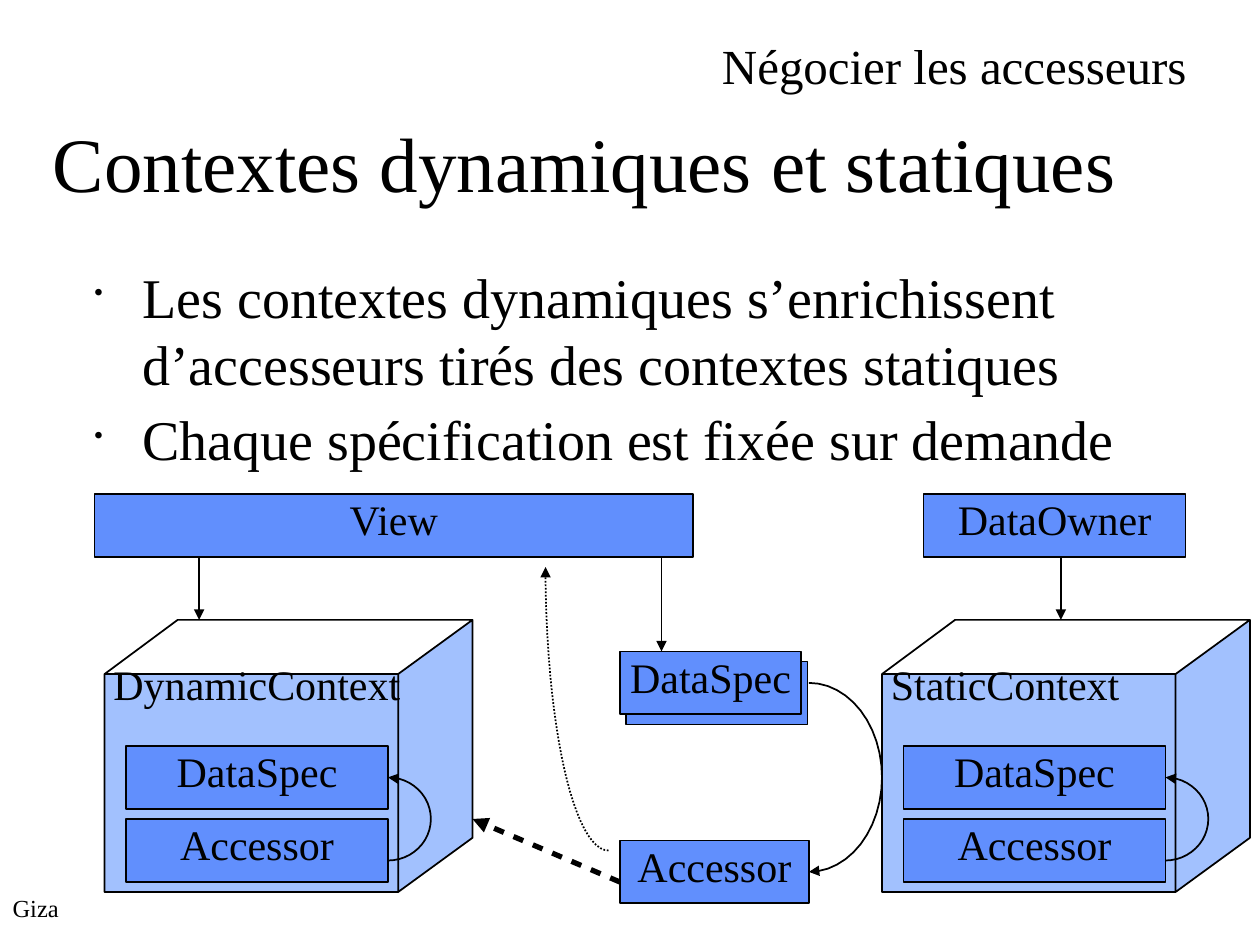
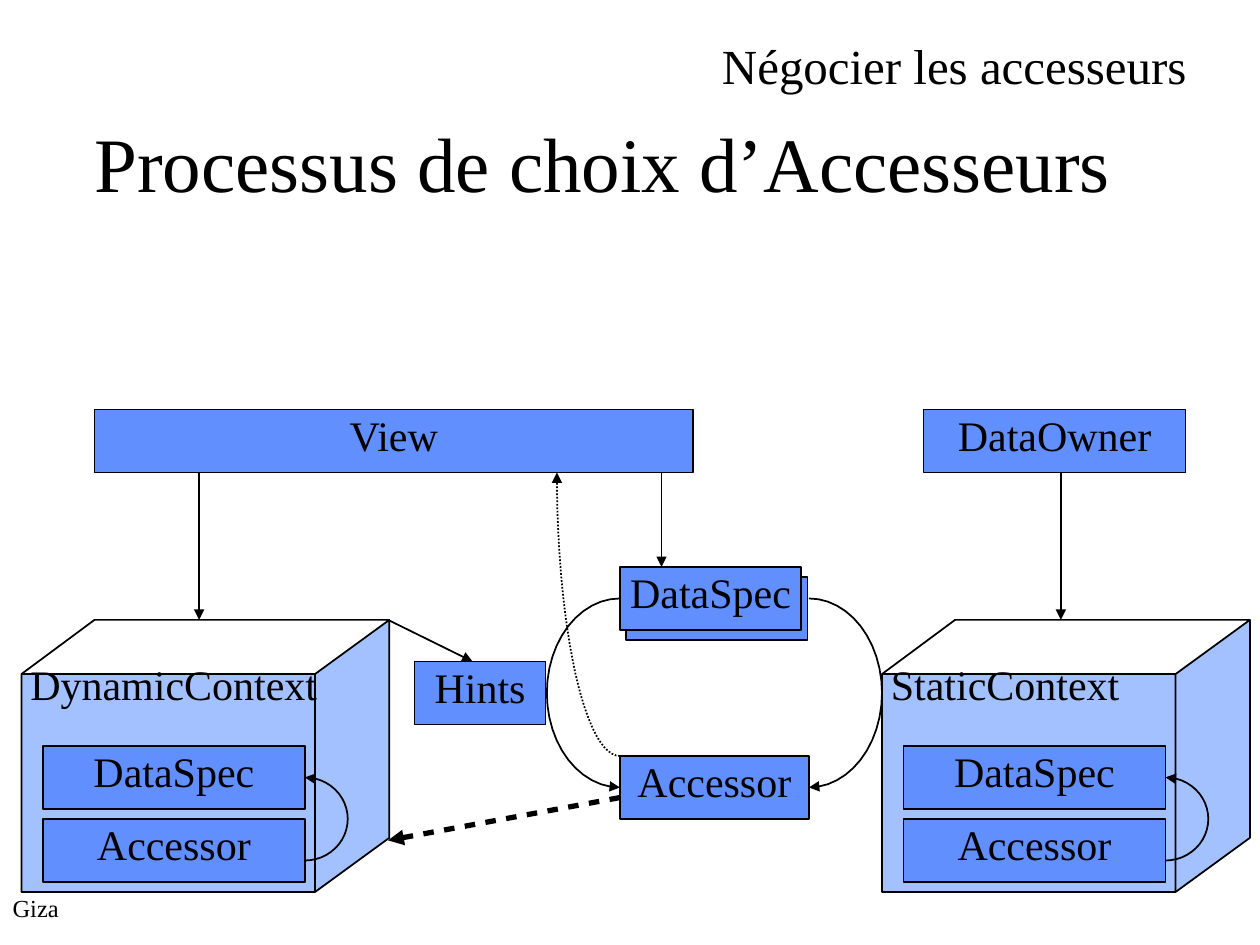
from math import cos, radians, sin

from lxml import etree
from pptx import Presentation
from pptx.dml.color import RGBColor
from pptx.enum.dml import MSO_LINE
from pptx.enum.shapes import MSO_CONNECTOR, MSO_SHAPE
from pptx.enum.text import MSO_ANCHOR, PP_ALIGN
from pptx.oxml.ns import qn
from pptx.util import Inches, Pt

STRAIGHT = MSO_CONNECTOR.STRAIGHT
RECTANGLE = MSO_SHAPE.RECTANGLE
TOP = MSO_ANCHOR.TOP
LEFT, CENTER = PP_ALIGN.LEFT, PP_ALIGN.CENTER
DOTTED = MSO_LINE.ROUND_DOT

BLACK = RGBColor(0, 0, 0)
BOX_BLUE = RGBColor(0x61, 0x8F, 0xFD)
CONTEXT_BLUE = RGBColor(0xA2, 0xC1, 0xFE)
FONT = "Times New Roman"
BOX_H = 0.5
CONTEXT_TOP = 4.92
STATIC_LEFT = 7
ARC_STEPS = 24


def add_text(shapes, box, paragraphs, size=24, boxed=False):
    """Add text at box (left, top, width, height), in a blue rectangle if boxed."""
    place = [Inches(length) for length in box]
    if boxed:
        shape = shapes.add_shape(RECTANGLE, *place)
        shape.shadow.inherit = False
        shape.fill.solid()
        shape.fill.fore_color.rgb = BOX_BLUE
        shape.line.color.rgb = BLACK
        shape.line.width = Pt(1)
    else:
        shape = shapes.add_textbox(*place)
    frame = shape.text_frame
    frame.word_wrap = True
    frame.vertical_anchor = TOP
    frame.margin_left = frame.margin_top = frame.margin_right = frame.margin_bottom = 0
    for i, text in enumerate(paragraphs):
        paragraph = frame.add_paragraph() if i else frame.paragraphs[0]
        paragraph.alignment = CENTER if boxed else LEFT
        run = paragraph.add_run()
        run.text = text
        run.font.name = FONT
        run.font.size = Pt(size)
        run.font.color.rgb = BLACK
    return shape


def add_outline(shapes, points):
    """Add an open freeform through points given in inches."""
    corners = [(Inches(x), Inches(y)) for x, y in points]
    builder = shapes.build_freeform(*corners[0], scale=1.0)
    builder.add_line_segments(corners[1:], close=False)
    shape = builder.convert_to_shape()
    shape.shadow.inherit = False
    shape.fill.background()
    shape.line.color.rgb = BLACK
    shape.line.width = Pt(1)
    return shape


SLIDES = [
    dict(title="Contextes dynamiques et statiques", title_left=0.42,
         bullets=["Les contextes dynamiques s’enrichissent d’accesseurs tirés "
                  "des contextes statiques",
                  "Chaque spécification est fixée sur demande"],
         view_top=3.92, dynamic_left=0.83, hints=False,
         feedback=(4.83, 4.5), enrich=((4.92, 7), (3.75, 6.5))),
    dict(title="Processus de choix d’Accesseurs", title_left=0.75,
         bullets=[],
         view_top=3.25, dynamic_left=0.17, hints=True,
         feedback=(4.92, 3.75), enrich=((4.92, 6.33), (3.08, 6.67))),
]

prs = Presentation()
prs.slide_width, prs.slide_height = Inches(10), Inches(7.5)

for content in SLIDES:
    shapes = prs.slides.add_slide(prs.slide_layouts[6]).shapes
    view_top = content["view_top"]
    view_bottom = view_top + BOX_H
    spec_top = view_top + 1.25
    accessor_top = spec_top + 1.5
    dynamic_left = content["dynamic_left"]

    # Headings, footer and bullets
    add_text(shapes, (0.1, 7.09, 0.57, 0.33), ["Giza"], 14)
    add_text(shapes, (content["title_left"], 0.92, 9.08, 0.83), [content["title"]], 44)
    add_text(shapes, (5.73, 0.28, 3.89, 0.57), ["Négocier les accesseurs"], 28)
    if content["bullets"]:
        body = add_text(shapes, (0.75, 2.08, 8.5, 1.75), content["bullets"], 32)
        for paragraph in body.text_frame.paragraphs:
            paragraph.space_before = Pt(4.8)
            props = paragraph._p.get_or_add_pPr()
            props.set("marL", str(Inches(0.38)))
            props.set("indent", str(-Inches(0.38)))
            etree.SubElement(props, qn("a:buSzPct")).set("val", "45000")
            etree.SubElement(props, qn("a:buChar")).set("char", "•")

    # Boxes between the two contexts
    boxes = [
        ("Accessor", 4.92, accessor_top, 1.5),
        ("DataOwner", 7.33, view_top, 2.08),
        ("View", 0.75, view_top, 4.75),
        ("", 4.97, spec_top + 0.08, 1.44),
        ("DataSpec", 4.92, spec_top, 1.44),
    ]
    if content["hints"]:
        boxes.append(("Hints", 3.29, 5.25, 1.04))
    for label, left, top, width in boxes:
        add_text(shapes, (left, top, width, BOX_H), [label] if label else [], boxed=True)

    # Arcs: shapes, centre x and y, radius x and y, start and end angle, dash
    arc_middle = spec_top + 1
    feedback_x, feedback_top = content["feedback"]
    arcs = [
        (shapes, 6.42, arc_middle, 0.58, 0.75, -90, 90, None),
        (shapes, feedback_x, feedback_top, 0.5, 2.25, 90, 180, DOTTED),
    ]
    if content["hints"]:
        arcs.append((shapes, 4.92, arc_middle, 0.58, 0.75, -90, -270, None))

    # Context cubes; the top face is crossed twice and stays unfilled
    for name, left, label_left in (("DynamicContext", dynamic_left, 0.07),
                                   ("StaticContext", STATIC_LEFT, 0.07)):
        context = shapes.add_group_shape().shapes
        front_top, bottom = CONTEXT_TOP + 0.43, CONTEXT_TOP + 2.16
        front_right, back_left, right = left + 2.33, left + 0.58, left + 2.92
        cube = add_outline(context, [
            (left, bottom), (front_right, bottom), (right, bottom - 0.43),
            (right, CONTEXT_TOP), (front_right, front_top), (front_right, bottom),
            (front_right, front_top), (left, front_top), (back_left, CONTEXT_TOP),
            (right, CONTEXT_TOP), (back_left, CONTEXT_TOP), (left, front_top),
            (left, bottom)])
        cube.fill.solid()
        cube.fill.fore_color.rgb = CONTEXT_BLUE
        for label, top in (("DataSpec", 5.92), ("Accessor", 6.5)):
            add_text(context, (left + 0.17, top, 2.08, BOX_H), [label], boxed=True)
        add_text(context, (left + label_left, 5.23, 2.48, BOX_H), [name])
        arcs.append((context, left + 2.25, 6.5, 0.34, 0.33, 90, -90, None))

    arrows = []
    for target, cx, cy, rx, ry, start, end, dash in arcs:
        angles = [radians(start + (end - start) * i / ARC_STEPS)
                  for i in range(ARC_STEPS + 1)]
        arc = add_outline(target, [(cx + rx * cos(a), cy + ry * sin(a)) for a in angles])
        if dash:
            arc.line.dash_style = dash
        arrows.append(arc)

    # Straight arrows
    routes = [
        ((8.42, view_bottom), (8.42, CONTEXT_TOP), 1),
        ((1.58, view_bottom), (1.58, CONTEXT_TOP), 1),
        ((5.25, view_bottom), (5.25, spec_top), 1),
        (*content["enrich"], 3),
    ]
    if content["hints"]:
        routes.append(((3.08, CONTEXT_TOP), (3.75, 5.25), 1))
    for start, end, width in routes:
        arrow = shapes.add_connector(STRAIGHT, *[Inches(v) for v in start + end])
        arrow.line.color.rgb = BLACK
        arrow.line.width = Pt(width)
        properties = arrow._element.spPr
        if width > 1:
            dashes = etree.SubElement(properties.find(qn("a:ln")), qn("a:custDash"))
            dash = etree.SubElement(dashes, qn("a:ds"))
            dash.set("d", "200000")
            dash.set("sp", "200000")
        etree.SubElement(properties, qn("a:effectLst"))
        arrows.append(arrow)

    for arrow in arrows:
        line = arrow._element.spPr.find(qn("a:ln"))
        etree.SubElement(line, qn("a:tailEnd")).set("type", "triangle")

prs.save("out.pptx")
